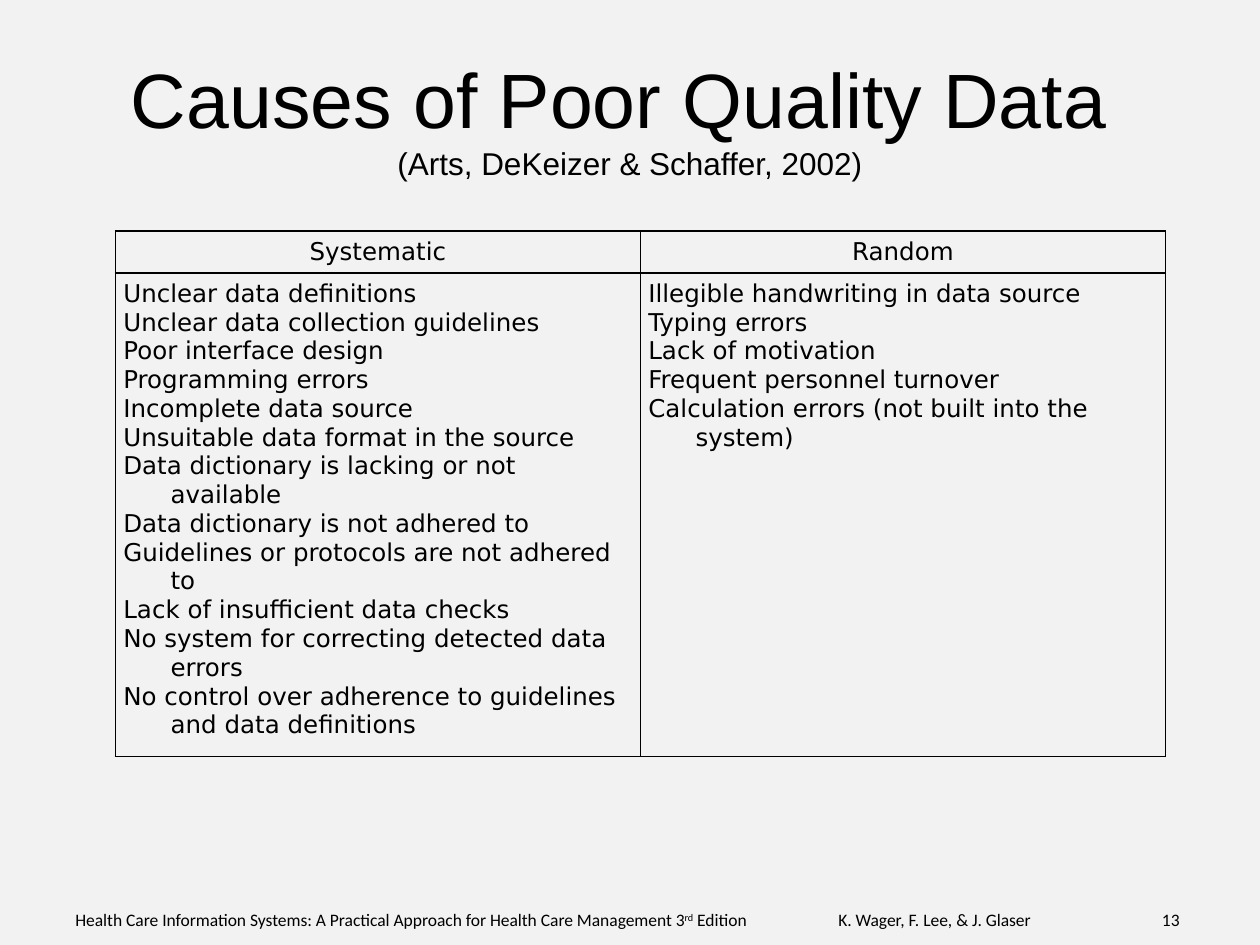
from lxml.etree import SubElement
from pptx import Presentation
from pptx.dml.color import RGBColor
from pptx.enum.text import MSO_ANCHOR, PP_ALIGN
from pptx.oxml.ns import qn
from pptx.util import Pt

BLACK = RGBColor(0, 0, 0)
LIGHT_GREY = RGBColor(0xF2, 0xF2, 0xF2)

CAUSES = {
    "Systematic": [
        "Unclear data definitions",
        "Unclear data collection guidelines",
        "Poor interface design",
        "Programming errors",
        "Incomplete data source",
        "Unsuitable data format in the source",
        "Data dictionary is lacking or not available",
        "Data dictionary is not adhered to",
        "Guidelines or protocols are not adhered to",
        "Lack of insufficient data checks",
        "No system for correcting detected data errors",
        "No control over adherence to guidelines and data definitions",
    ],
    "Random": [
        "Illegible handwriting in data source",
        "Typing errors",
        "Lack of motivation",
        "Frequent personnel turnover",
        "Calculation errors (not built into the system)",
    ],
}


def add_run(paragraph, text, font_name, size):
    run = paragraph.add_run()
    run.text = text
    run.font.name = font_name
    run.font.size = Pt(size)
    run.font.color.rgb = BLACK
    return run


def fill_cell(cell, lines, alignment):
    cell.fill.background()
    cell.margin_left = cell.margin_right = Pt(4.5)
    cell.margin_top = cell.margin_bottom = Pt(3.6)
    for index, line in enumerate(lines):
        frame = cell.text_frame
        paragraph = frame.add_paragraph() if index else frame.paragraphs[0]
        paragraph.alignment = alignment
        # Hanging indent
        properties = paragraph._p.get_or_add_pPr()
        properties.set("marL", str(Pt(27)))
        properties.set("indent", str(-Pt(27)))
        add_run(paragraph, line, "DejaVu Sans", 14)
    # Borders go before the fill in the cell properties
    cell_properties = cell._tc.get_or_add_tcPr()
    for position, side in enumerate(("lnL", "lnR", "lnT", "lnB")):
        border = SubElement(cell_properties, qn(f"a:{side}"), w=str(Pt(1)))
        solid_fill = SubElement(border, qn("a:solidFill"))
        SubElement(solid_fill, qn("a:srgbClr"), val=str(BLACK))
        cell_properties.insert(position, border)


presentation = Presentation()
presentation.slide_width = Pt(720)
presentation.slide_height = Pt(540)
slide = presentation.slides.add_slide(presentation.slide_layouts[6])
slide.background.fill.solid()
slide.background.fill.fore_color.rgb = LIGHT_GREY

# Footer: book title, authors and page number on tab stops
footer = slide.shapes.add_textbox(Pt(36), Pt(516), Pt(654), Pt(22))
footer.text_frame.word_wrap = True
paragraph = footer.text_frame.paragraphs[0]
tab_list = SubElement(paragraph._p.get_or_add_pPr(), qn("a:tabLst"))
for position, alignment in ((436, "l"), (631, "r")):
    SubElement(tab_list, qn("a:tab"), pos=str(Pt(position)), algn=alignment)
book = "Health Care Information Systems: A Practical Approach for Health Care Management 3"
add_run(paragraph, book, "Calibri", 10)
ordinal = add_run(paragraph, "rd", "Calibri", 10)
ordinal.font._element.set("baseline", "30000")
add_run(paragraph, " Edition\tK. Wager, F. Lee, & J. Glaser\t13", "Calibri", 10)

# Title and its citation
title = slide.shapes.add_textbox(Pt(36), Pt(21.6), Pt(648), Pt(90))
title.text_frame.word_wrap = True
title.text_frame.vertical_anchor = MSO_ANCHOR.MIDDLE
paragraph = title.text_frame.paragraphs[0]
paragraph.alignment = PP_ALIGN.CENTER
add_run(paragraph, "Causes of Poor Quality Data ", "Arial", 44)
paragraph.add_line_break()
add_run(paragraph, "(Arts, DeKeizer & Schaffer, 2002)", "Arial", 18)

# Table of causes, one column per kind
table = slide.shapes.add_table(2, len(CAUSES), Pt(66), Pt(132), Pt(600), Pt(295.5)).table
table.first_row = False
table.horz_banding = False
table.rows[0].height = Pt(23.5)
table.rows[1].height = Pt(272)
for column, (heading, causes) in enumerate(CAUSES.items()):
    table.columns[column].width = Pt(300)
    fill_cell(table.cell(0, column), [heading], PP_ALIGN.CENTER)
    fill_cell(table.cell(1, column), causes, PP_ALIGN.LEFT)

presentation.save("out.pptx")
